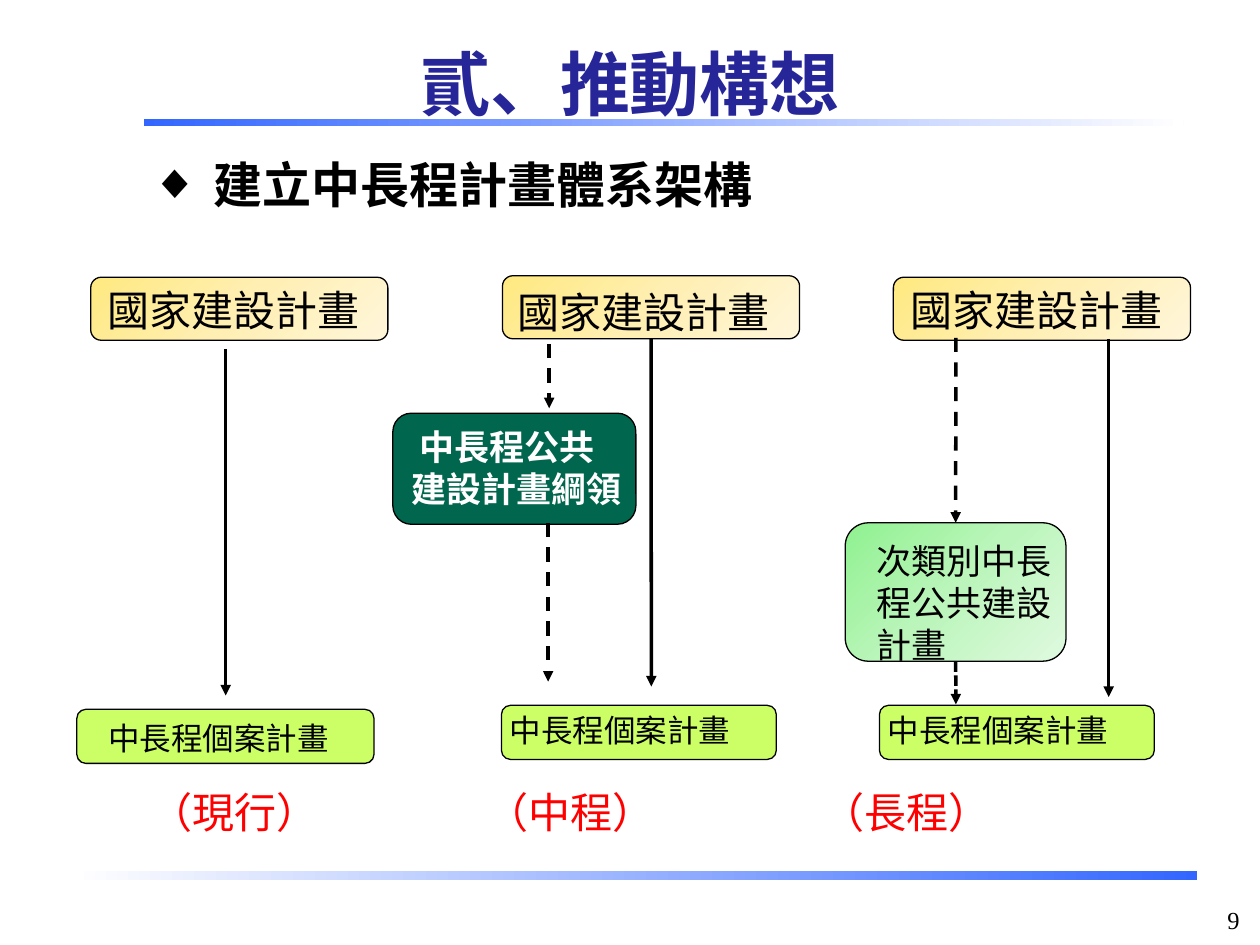
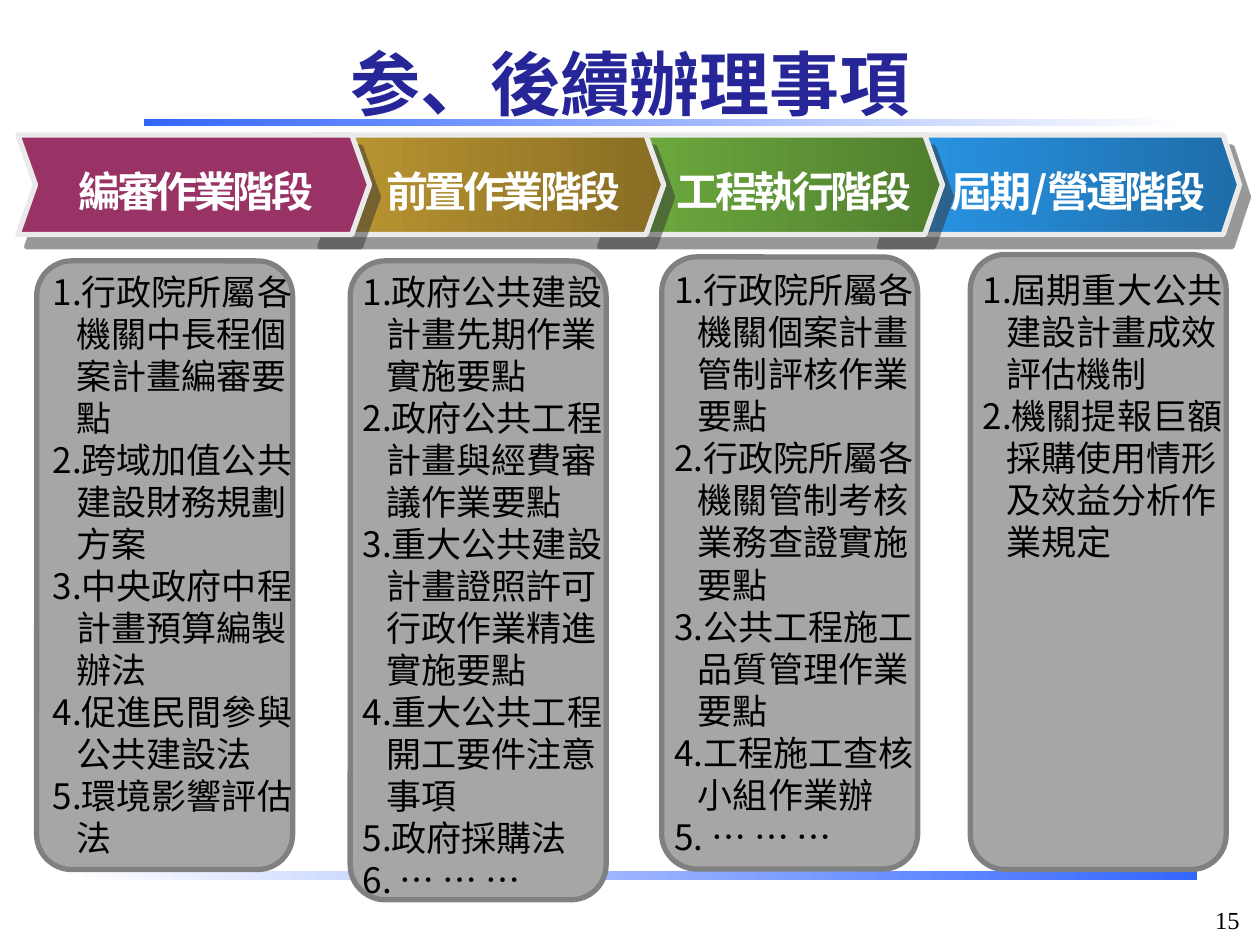
from dataclasses import dataclass
from typing import Any, NamedTuple, Optional

from lxml.etree import SubElement
from pptx import Presentation
from pptx.dml.color import RGBColor
from pptx.enum.dml import MSO_LINE_DASH_STYLE as Dash
from pptx.enum.shapes import MSO_CONNECTOR_TYPE as Link, MSO_SHAPE as Form
from pptx.enum.text import MSO_ANCHOR as Anchor, MSO_AUTO_SIZE as Auto, PP_ALIGN as Align
from pptx.oxml.ns import qn
from pptx.util import Cm, Pt


# ---- Theme ----
@dataclass(frozen=True)
class Look:
    size: int
    color: str = "000000"
    bold: bool = False
    font: str = "Noto Sans CJK SC"
    align: Align = Align.LEFT
    lead: float = 1.2
    after: int = 0
    track: int = 0


@dataclass(frozen=True)
class Theme:
    blue: str = "3366FF"
    white: str = "FFFFFF"
    black: str = "000000"
    plan: tuple = ("FFE980", "FFEFB3", "FFF6DA")
    case: tuple = ("CCFF66",)
    guide: tuple = ("00664D",)
    group: tuple = ("90F190", "BCF5BC", "DFF9DF")
    card: tuple = ("A6A6A6",)
    rim: str = "808080"
    edge: str = "EAEAEA"
    shade: str = "333333"
    title: Look = Look(40, "262699", True, align=Align.CENTER)
    head: Look = Look(28, bold=True, lead=1.32, after=6)
    large: Look = Look(24)
    list: Look = Look(20)
    small: Look = Look(18)
    light: Look = Look(20, "FFFFFF", True)
    term: Look = Look(24, "FF0000")
    step: Look = Look(24, "FFFFFF", True, lead=1.08, track=-200)
    mid: Look = Look(24, "FFFFFF", True, align=Align.CENTER, lead=1.08, track=-200)
    page: Look = Look(14, font="Times New Roman", align=Align.RIGHT)


T = Theme()


# ---- Items, all lengths in centimetres ----
class Box(NamedTuple):
    x: float
    y: float
    w: float
    h: float


class Node(NamedTuple):
    box: Box
    fill: tuple
    spot: Box
    look: Look
    text: tuple


class Arrow(NamedTuple):
    x: float
    top: float
    end: float
    dash: Optional[Dash] = None
    above: Optional[int] = None
    below: Optional[int] = None


class Stage(NamedTuple):
    name: str
    fill: tuple
    arrow: Box
    bend: float
    label: Box
    look: Look
    card: Box
    spot: Box
    items: tuple


# ---- Drawing helpers ----
def apply(target: Any, values: dict) -> None:
    for key, value in values.items():
        setattr(target, key, value)


def place(shape: Any, box: Box) -> None:
    apply(shape, dict(zip(("left", "top", "width", "height"), map(Cm, box))))


def paint(shape: Any, colors: tuple, angle: int = 0) -> None:
    if len(colors) == 1:
        shape.fill.solid()
        shape.fill.fore_color.rgb = RGBColor.from_string(colors[0])
        return
    shape.fill.gradient()
    shape.fill.gradient_angle = -angle % 360
    stops = shape.element.spPr.find(".//" + qn("a:gsLst"))
    stops.clear()
    for i, color in enumerate(colors):
        stop = SubElement(stops, qn("a:gs"), pos=str(100000 * i // (len(colors) - 1)))
        SubElement(stop, qn("a:srgbClr"), val=color)


def form(slide: Any, kind: Form, box: Box, colors: tuple, line: Optional[str] = None,
         width: float = 0.75, angle: int = 0, bend: Optional[float] = None) -> Any:
    shape = slide.shapes.add_shape(kind, *map(Cm, box))
    shape.shadow.inherit = False
    paint(shape, colors, angle)
    if line:
        shape.line.color.rgb = RGBColor.from_string(line)
        shape.line.width = Pt(width)
    else:
        shape.line.fill.background()
    if bend is not None:
        shape.adjustments[0] = bend
    return shape


def write(shape: Any, lines: tuple, look: Look, anchor: Anchor = Anchor.TOP,
          mark: Optional[tuple] = None, hang: float = 0, tabs: tuple = ()) -> None:
    frame = shape.text_frame
    apply(frame, dict(word_wrap=True, auto_size=Auto.NONE, vertical_anchor=anchor,
                      margin_left=Cm(0.25), margin_right=Cm(0.25),
                      margin_top=Cm(0.19), margin_bottom=Cm(0.13)))
    for i, line in enumerate(lines):
        para = frame.paragraphs[0] if i == 0 else frame.add_paragraph()
        apply(para, dict(alignment=look.align, line_spacing=Pt(look.size * look.lead),
                         space_before=Pt(0), space_after=Pt(look.after)))
        props = para._p.get_or_add_pPr()
        if mark:
            props.set("marL", str(Cm(hang)))
            props.set("indent", str(-Cm(hang)))
            tag, key, value = mark
            SubElement(props, qn(tag), {key: value})
        if tabs:
            stops = SubElement(props, qn("a:tabLst"))
            for tab in tabs:
                SubElement(stops, qn("a:tab"), pos=str(Cm(tab)), algn="l")
        run = para.add_run()
        run.text = line
        apply(run.font, dict(name=look.font, size=Pt(look.size), bold=look.bold))
        run.font.color.rgb = RGBColor.from_string(look.color)
        style = run._r.get_or_add_rPr()
        SubElement(style, qn("a:ea"), typeface=look.font)
        if look.track:
            style.set("spc", str(look.track))


def label(slide: Any, box: Box, lines: tuple, look: Look, **extra: Any) -> Any:
    shape = slide.shapes.add_textbox(*map(Cm, box))
    write(shape, lines, look, **extra)
    return shape


def link(slide: Any, arrow: Arrow, boxes: list) -> None:
    x = Cm(arrow.x)
    line = slide.shapes.add_connector(Link.STRAIGHT, x, Cm(arrow.top), x, Cm(arrow.end))
    if arrow.above is not None:
        line.begin_connect(boxes[arrow.above], 2)
    if arrow.below is not None:
        line.end_connect(boxes[arrow.below], 0)
    line.line.color.rgb = RGBColor.from_string(T.black)
    line.line.width = Pt(2)
    if arrow.dash:
        line.line.dash_style = arrow.dash
    SubElement(line.line._get_or_add_ln(), qn("a:tailEnd"), type="triangle")
    SubElement(line.element.spPr, qn("a:effectLst"))


def cast(shape: Any) -> None:
    """Give a stage arrow its hard slanting shadow."""
    effects = shape.element.spPr.find(qn("a:effectLst"))
    shadow = SubElement(effects, qn("a:outerShdw"), blurRad="0", dist=str(Pt(8.6)),
                        dir=str(54 * 60000), algn="ctr", rotWithShape="0")
    color = SubElement(shadow, qn("a:srgbClr"), val=T.shade)
    SubElement(color, qn("a:alpha"), val="50000")


# ---- Shared parts ----
def bands(deck: Any, slide: Any) -> None:
    for box, colors in ((Box(1.47, 17.55, 22.66, 0.2), (T.white, T.blue)),
                        (Box(2.9, 2.39, 20.96, 0.15), (T.blue, T.white))):
        band = form(slide, Form.RECTANGLE, box, colors)
        deck.slide_master.shapes.element.append(band.element)


def start(deck: Any, layout: int, title: str, page: str) -> Any:
    slide = deck.slides.add_slide(deck.slide_layouts[layout])
    place(slide.shapes.title, Box(0, 0.66, 25.4, 1.96))
    write(slide.shapes.title, (title,), T.title, Anchor.MIDDLE)
    label(slide, Box(23.11, 18.06, 2.13, 0.61), (page,), T.page)
    return slide


# ---- Planning framework ----
PLAN, CASE = ("國家建設計畫",), ("中長程個案計畫",)


def plan(x: float, y: float, tx: float, ty: float) -> Node:
    return Node(Box(x, y, 5.99, 1.27), T.plan, Box(tx, ty, 5.99, 1.27), T.large, PLAN)


def case(x: float, y: float, w: float, tx: float, ty: float) -> Node:
    return Node(Box(x, y, w, 1.09), T.case, Box(tx, ty, 6.17, 1.02), T.small, CASE)


NODES = (
    plan(1.83, 5.59, 1.91, 5.54),
    plan(10.13, 5.56, 10.19, 5.59),
    plan(18.01, 5.59, 18.11, 5.54),
    case(1.55, 14.3, 5.99, 1.93, 14.3),
    case(10.11, 14.22, 5.54, 10.03, 14.15),
    case(17.73, 14.22, 5.54, 17.65, 14.15),
    Node(Box(7.92, 8.33, 4.9, 2.24), T.guide, Box(8.05, 8.38, 5.49, 1.96), T.light,
         (" 中長程公共", "建設計畫綱領")),
    Node(Box(17.04, 10.54, 4.45, 2.79), T.group, Box(17.42, 10.69, 4.27, 2.82), T.list,
         ("次類別中長程公共建設計畫",)),
)
ARROWS = (
    Arrow(4.55, 7.04, 14.02),
    Arrow(13.13, 6.83, 13.84, above=1),
    Arrow(11.05, 10.54, 13.74, Dash.DASH),
    Arrow(11.07, 6.93, 8.23, Dash.DASH),
    Arrow(19.27, 6.81, 10.54, Dash.DASH, below=7),
    Arrow(19.27, 13.33, 14.2, Dash.SQUARE_DOT, above=7),
    Arrow(22.35, 6.83, 14.05),
)


def frame(slide: Any) -> None:
    body = slide.placeholders[1]
    place(body, Box(2.79, 2.74, 20.32, 1.75))
    write(body, ("建立中長程計畫體系架構",), T.head, Anchor.MIDDLE, ("a:buChar", "char", "◆"), 1.27)
    boxes = []
    for node in NODES:
        boxes.append(form(slide, Form.ROUNDED_RECTANGLE, node.box, node.fill, T.black, angle=45))
        label(slide, node.spot, node.text, node.look)
    for arrow in ARROWS:
        link(slide, arrow, boxes)
    label(slide, Box(2.79, 15.67, 20.88, 1.3), ("（現行）\t（中程）\t（長程）",), T.term,
          tabs=(6.77, 13.54))


# ---- Follow-up stages ----
STAGES = (
    Stage("編審作業階段", ("993366",), Box(0.36, 2.72, 7.09, 2.01), 0.178,
          Box(0.74, 3.25, 6.43, 0.85), T.mid,
          Box(0.74, 5.26, 5.16, 12.27), Box(0.81, 5.26, 5.46, 13.26),
          ("行政院所屬各機關中長程個案計畫編審要點", "跨域加值公共建設財務規劃方案",
           "中央政府中程計畫預算編製辦法", "促進民間參與公共建設法", "環境影響評估法")),
    Stage("前置作業階段", ("BE9932", "886D24"), Box(6.27, 2.72, 7.11, 2.01), 0.178,
          Box(7.54, 3.25, 6.55, 0.85), T.step,
          Box(7.06, 5.26, 5.16, 12.88), Box(7.06, 5.26, 5.46, 13.08),
          ("政府公共建設計畫先期作業實施要點", "政府公共工程計畫與經費審議作業要點",
           "重大公共建設計畫證照許可行政作業精進實施要點", "重大公共工程開工要件注意事項",
           "政府採購法", " … … …")),
    Stage("工程執行階段", ("70B040", "507E2E"), Box(11.91, 2.72, 7.09, 2.01), 0.178,
          Box(13.39, 3.25, 6.65, 0.85), T.step,
          Box(13.34, 5.18, 5.16, 12.34), Box(13.34, 5.23, 5.46, 12.22),
          ("行政院所屬各機關個案計畫管制評核作業要點", "行政院所屬各機關管制考核業務查證實施要點",
           "公共工程施工品質管理作業要點", "工程施工查核小組作業辦", " … … …")),
    Stage("屆期/營運階段", ("2A99EC", "1E6DA9"), Box(17.55, 2.72, 7.44, 2.01), 0.165,
          Box(18.92, 3.25, 6.96, 0.85), T.step,
          Box(19.56, 5.13, 5.16, 12.4), Box(19.56, 5.23, 5.46, 6.25),
          ("屆期重大公共建設計畫成效評估機制", "機關提報巨額採購使用情形及效益分析作業規定")),
)


def stages(slide: Any) -> None:
    for stage in reversed(STAGES):
        cast(form(slide, Form.CHEVRON, stage.arrow, stage.fill, T.edge, 3, bend=stage.bend))
    for i, stage in enumerate(STAGES, 1):
        label(slide, stage.label, (stage.name,), stage.look)
        form(slide, Form.ROUNDED_RECTANGLE, stage.card, T.card, T.rim, 3, bend=0.137)
        body = slide.placeholders[i]
        place(body, stage.spot)
        write(body, stage.items, T.list, mark=("a:buAutoNum", "type", "arabicPeriod"), hang=0.48)
        slide.shapes.element.append(body.element)  # bring the list above its card


def main() -> None:
    deck = Presentation()
    deck.slide_width, deck.slide_height = Cm(25.4), Cm(19.05)
    first = start(deck, 1, "貳、推動構想", "9")
    bands(deck, first)
    frame(first)
    stages(start(deck, 4, "参、後續辦理事項", "15"))
    deck.save("out.pptx")


if __name__ == "__main__":
    main()
